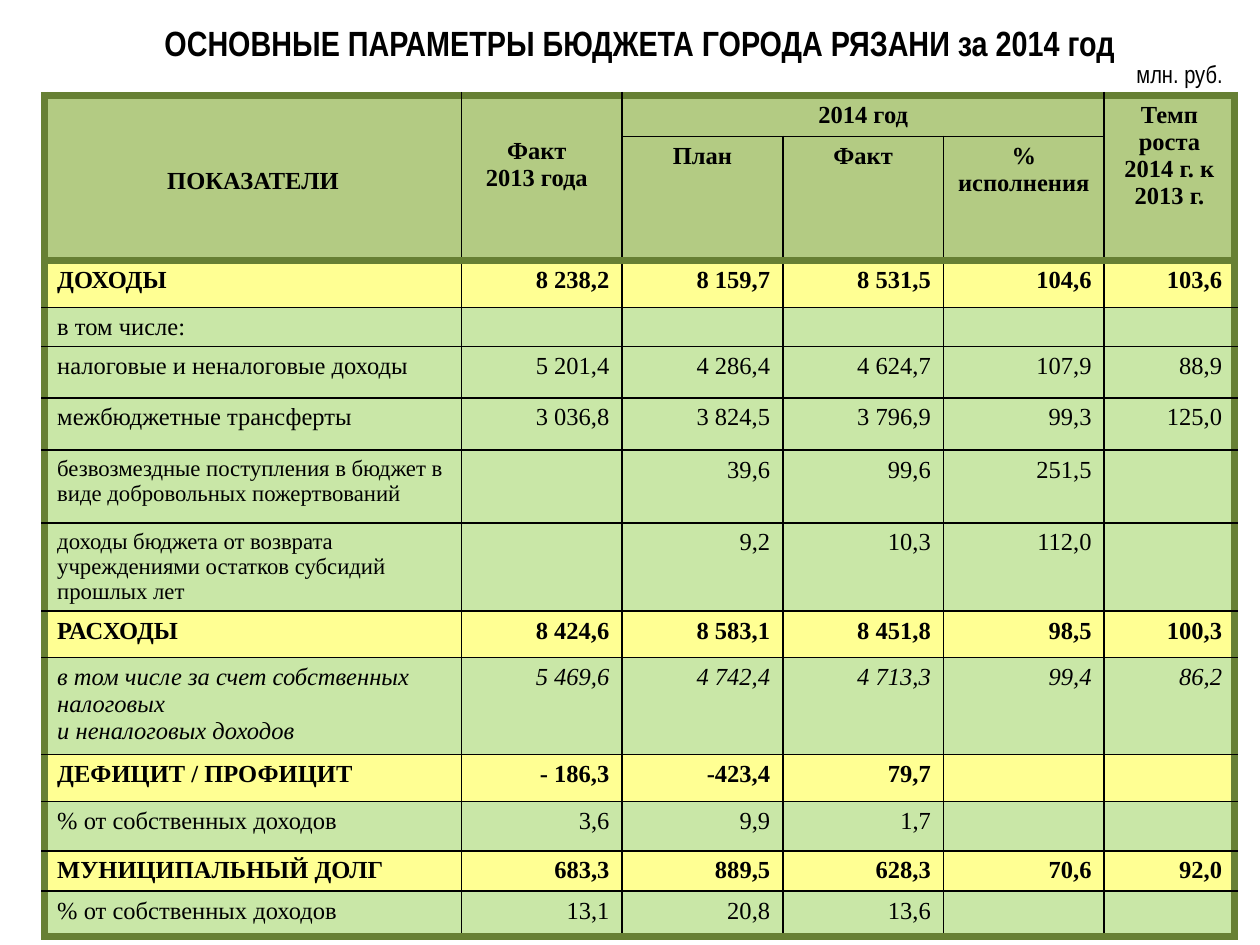
from lxml.etree import SubElement
from pptx import Presentation
from pptx.dml.color import RGBColor
from pptx.enum.text import MSO_ANCHOR, PP_ALIGN
from pptx.oxml import parse_xml
from pptx.oxml.ns import nsdecls, qn
from pptx.util import Cm, Pt

COLORS = {"text": "000000", "grid": "000000", "frame": "678034",
          "header": "B3CB83", "total": "FFFF93", "detail": "C9E7A7"}
BODY_FONT, TITLE_FONT = "Times New Roman", "Arial Narrow"
COL_WIDTHS = [8.4, 3.24, 3.24, 3.24, 3.24, 2.63]
ROW_HEIGHTS = [0.83, 2.44, 0.95, 0.79, 1.03, 1.05, 1.47, 1.77,
               0.93, 1.96, 0.95, 0.99, 0.81, 0.91]
HEADER_ROWS = 2

# (row, column, last row, last column, text)
HEADERS = [
    (0, 0, 1, 0, "ПОКАЗАТЕЛИ"),
    (0, 1, 1, 1, "Факт\n2013 года"),
    (0, 2, 0, 4, "2014 год"),
    (0, 5, 1, 5, "Темп роста 2014 г. к 2013 г."),
    (1, 2, 1, 2, "План"),
    (1, 3, 1, 3, "Факт"),
    (1, 4, 1, 4, "% исполнения"),
]
# (style, label, values)
INDICATORS = [
    ("total", "ДОХОДЫ", ["8 238,2", "8 159,7", "8 531,5", "104,6", "103,6"]),
    ("detail", "в том числе:", ["", "", "", "", ""]),
    ("detail", "налоговые и неналоговые доходы",
     ["5 201,4", "4 286,4", "4 624,7", "107,9", "88,9"]),
    ("detail", "межбюджетные трансферты",
     ["3 036,8", "3 824,5", "3 796,9", "99,3", "125,0"]),
    ("small", "безвозмездные поступления в бюджет в виде добровольных пожертвований",
     ["", "39,6", "99,6", "251,5", ""]),
    ("small", "доходы бюджета от возврата учреждениями остатков субсидий прошлых лет",
     ["", "9,2", "10,3", "112,0", ""]),
    ("total", "РАСХОДЫ", ["8 424,6", "8 583,1", "8 451,8", "98,5", "100,3"]),
    ("italic", "в том числе за счет собственных налоговых\nи неналоговых доходов",
     ["5 469,6", "4 742,4", "4 713,3", "99,4", "86,2"]),
    ("total", "ДЕФИЦИТ / ПРОФИЦИТ", ["- 186,3", "-423,4", "79,7", "", ""]),
    ("detail", "% от собственных доходов", ["3,6", "9,9", "1,7", "", ""]),
    ("total", "МУНИЦИПАЛЬНЫЙ ДОЛГ", ["683,3", "889,5", "628,3", "70,6", "92,0"]),
    ("detail", "% от собственных доходов", ["13,1", "20,8", "13,6", "", ""]),
]


def set_text(tf, text, font, size, align, bold=False, italic=False):
    tf.text = text
    for p in tf.paragraphs:
        p.alignment = align
        for r in p.runs:
            r.font.name, r.font.size = font, Pt(size)
            r.font.bold, r.font.italic = bold, italic
            r.font.color.rgb = RGBColor.from_string(COLORS["text"])
        if not p.runs:  # keeps an empty cell from stretching its row
            SubElement(p._p, qn("a:endParaRPr"), sz=str(size * 100))


def add_text(slide, left, top, width, height, text, size, align, bold=False):
    tf = slide.shapes.add_textbox(Cm(left), Cm(top), Cm(width), Cm(height)).text_frame
    tf.word_wrap = True
    tf.vertical_anchor = MSO_ANCHOR.MIDDLE
    set_text(tf, text, TITLE_FONT, size, align, bold)


def format_cell(cell, color):
    """Fill the cell and drop its bottom margin, so that the row keeps its height."""
    cell.margin_bottom = 0
    cell.fill.solid()
    cell.fill.fore_color.rgb = RGBColor.from_string(COLORS[color])


def set_borders(cell, framed):
    """Draw all four sides, those named in framed with the thick frame line."""
    tcPr = cell._tc.get_or_add_tcPr()
    for i, side in enumerate("LRTB"):
        color, width = ("frame", 4.5) if side in framed else ("grid", 1)
        tcPr.insert(i, parse_xml(
            f'<a:ln{side} {nsdecls("a")} w="{Pt(width)}"><a:solidFill>'
            f'<a:srgbClr val="{COLORS[color]}"/></a:solidFill></a:ln{side}>'))


def framed_sides(row, col, last_row):
    sides = {"L": col == 0,
             "R": col == len(COL_WIDTHS) - 1,
             "T": row in (0, HEADER_ROWS),
             "B": last_row in (HEADER_ROWS - 1, len(ROW_HEIGHTS) - 1)}
    return [side for side, framed in sides.items() if framed]


def fill_header(table):
    for row in range(HEADER_ROWS):
        for col in range(len(COL_WIDTHS)):
            cell = table.cell(row, col)
            set_text(cell.text_frame, "", BODY_FONT, 14, PP_ALIGN.CENTER)
            format_cell(cell, "header")
    for row, col, last_row, last_col, text in HEADERS:
        cell = table.cell(row, col)
        if (row, col) != (last_row, last_col):
            cell.merge(table.cell(last_row, last_col))
        for end in cell._tc.findall(".//" + qn("a:endParaRPr")):
            end.getparent().remove(end)
        set_text(cell.text_frame, text, BODY_FONT, 14, PP_ALIGN.CENTER, bold=True)
        if last_row > row and col < 2:
            cell.vertical_anchor = MSO_ANCHOR.MIDDLE
    year_cell = table.cell(0, 1)
    year_cell.margin_right, year_cell.margin_bottom = Cm(0.45), Cm(0.65)


def fill_indicators(table):
    for row, (style, label, values) in enumerate(INDICATORS, HEADER_ROWS):
        for col, text in enumerate([label] + values):
            cell = table.cell(row, col)
            size = 13 if style == "small" and col == 0 else 14
            align = PP_ALIGN.RIGHT if col else PP_ALIGN.LEFT
            set_text(cell.text_frame, text, BODY_FONT, size, align,
                     style == "total", style == "italic")
            format_cell(cell, "total" if style == "total" else "detail")


def add_budget_table(slide, left, top):
    table = slide.shapes.add_table(
        len(ROW_HEIGHTS), len(COL_WIDTHS), Cm(left), Cm(top),
        Cm(sum(COL_WIDTHS)), Cm(sum(ROW_HEIGHTS))).table
    for column, width in zip(table.columns, COL_WIDTHS):
        column.width = Cm(width)
    for row, height in zip(table.rows, ROW_HEIGHTS):
        row.height = Cm(height)
    fill_header(table)
    fill_indicators(table)
    for row in range(len(ROW_HEIGHTS)):
        for col in range(len(COL_WIDTHS)):
            cell = table.cell(row, col)
            last_row = row + cell.span_height - 1 if cell.is_merge_origin else row
            set_borders(cell, framed_sides(row, col, last_row))


def main():
    prs = Presentation()
    prs.slide_width, prs.slide_height = Cm(25.4), Cm(19.05)
    slide = prs.slides.add_slide(prs.slide_layouts[6])
    add_text(slide, 1.3, 0.25, 23.2, 1.2,
             "ОСНОВНЫЕ ПАРАМЕТРЫ БЮДЖЕТА ГОРОДА РЯЗАНИ за 2014 год",
             20, PP_ALIGN.CENTER, bold=True)
    add_budget_table(slide, 0.9, 1.92)
    add_text(slide, 22.1, 1.05, 2.8, 0.86, "млн. руб.", 14, PP_ALIGN.RIGHT)
    prs.save("out.pptx")


if __name__ == "__main__":
    main()
